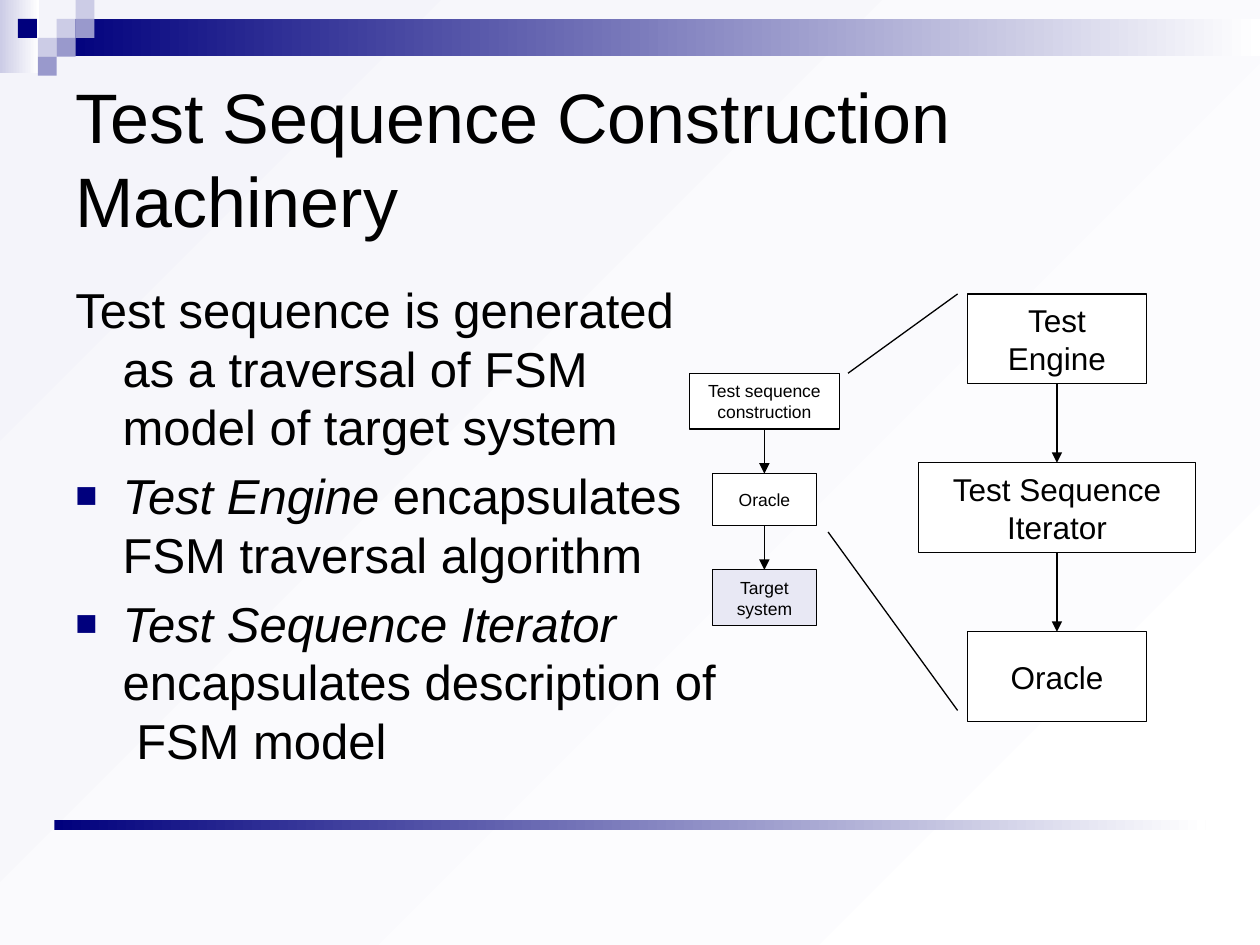
from dataclasses import dataclass
from typing import NamedTuple

from lxml import etree
from pptx import Presentation
from pptx.dml.color import RGBColor
from pptx.enum import shapes, text
from pptx.oxml import ns
from pptx.util import Pt


@dataclass(frozen=True)
class Theme:
    font: str = "Arial"
    ink: str = "000000"
    navy: str = "00007D"
    mid: str = "9999CC"
    pale: str = "CCCCE6"
    tint: str = "E8E8F4"
    mist: str = "F4F4FA"
    white: str = "FFFFFF"
    title: float = 40
    body: float = 28
    large: float = 18
    small: float = 10
    line: float = 0.75


class Area(NamedTuple):
    left: float
    top: float
    width: float
    height: float


class Tile(NamedTuple):
    col: float
    row: int
    color: str


class Node(NamedTuple):
    label: str
    area: Area
    size: float
    fill: str


class Item(NamedTuple):
    lead: str
    rest: str


class Ray(NamedTuple):
    x1: float
    y1: float
    x2: float
    y2: float


T = Theme()
deck = Presentation()
deck.slide_width, deck.slide_height = Pt(720), Pt(540)
slide = deck.slides.add_slide(deck.slide_layouts[6])


def rgb(code: str) -> RGBColor:
    return RGBColor.from_string(code)


def sub(parent, tag: str, **attrs: str):
    return etree.SubElement(parent, ns.qn(tag), attrs)


def blend(fill, start: str, angle: float = 0) -> None:
    """Fade from a colour to white."""
    fill.gradient()
    fill.gradient_angle = angle
    for stop, code in zip(fill.gradient_stops, (start, T.white)):
        stop.color.rgb = rgb(code)


def style(run, size: float, slant: bool = False) -> None:
    run.font.name, run.font.size = T.font, Pt(size)
    run.font.color.rgb = rgb(T.ink)
    run.font.italic = slant


def block(area: Area):
    box = slide.shapes.add_shape(shapes.MSO_SHAPE.RECTANGLE, *map(Pt, area))
    box.shadow.inherit = False
    box.line.fill.background()
    return box


def draw_bar(area: Area, color: str) -> None:
    blend(block(area).fill, color)


def draw_tile(tile: Tile) -> None:
    box = block(Area(tile.col * UNIT, tile.row * UNIT, UNIT, UNIT))
    box.fill.solid()
    box.fill.fore_color.rgb = rgb(tile.color)


def add_text(area: Area, anchor):
    frame = slide.shapes.add_textbox(*map(Pt, area)).text_frame
    frame.word_wrap = True
    frame.vertical_anchor = anchor
    return frame


def draw_item(para, item: Item) -> None:
    """Hanging paragraph; a lead phrase brings a bullet and italics."""
    para.space_before = Pt(0.2 * T.body)
    props = para._p.get_or_add_pPr()
    props.set("marL", str(Pt(27)))
    props.set("indent", str(-Pt(27)))
    if item.lead:
        sub(sub(props, "a:buClr"), "a:srgbClr", val=T.navy)
        sub(props, "a:buSzPct", val="75000")
        sub(props, "a:buFont", typeface=T.font)
        sub(props, "a:buChar", char="■")
    for part in filter(None, item):
        run = para.add_run()
        run.text = part
        style(run, T.body, part == item.lead)


def draw_node(node: Node):
    box = block(node.area)
    box.fill.solid()
    box.fill.fore_color.rgb = rgb(node.fill)
    box.line.color.rgb, box.line.width = rgb(T.ink), Pt(T.line)
    frame = box.text_frame
    frame.text = node.label
    frame.word_wrap = True
    frame.vertical_anchor = text.MSO_ANCHOR.MIDDLE
    para = frame.paragraphs[0]
    para.alignment = text.PP_ALIGN.CENTER
    style(para.runs[0], node.size)
    return box


def draw_line(ray: Ray):
    link = slide.shapes.add_connector(
        shapes.MSO_CONNECTOR.STRAIGHT, *map(Pt, ray))
    link.line.color.rgb, link.line.width = rgb(T.ink), Pt(T.line)
    sub(link._element.spPr, "a:effectLst")
    return link


def draw_chain(nodes: list[Node]) -> None:
    boxes = [draw_node(node) for node in nodes]
    for upper, lower in zip(boxes, boxes[1:]):
        link = draw_line(Ray(0, 0, 0, 0))
        link.begin_connect(upper, 2)
        link.end_connect(lower, 0)
        sub(link.line._get_or_add_ln(), "a:tailEnd", type="triangle")


# Background and corner ornament
UNIT = 10.8
blend(slide.background.fill, T.mist, 315)
draw_bar(Area(0, 0, 22.3, 41.8), T.pale)
draw_bar(Area(32.4, 10.8, 687.6, 21.4), T.navy)
for tile in (Tile(3, 1, T.pale), Tile(4, 0, T.pale), Tile(4, 1, T.mid),
             Tile(2, 2, T.pale), Tile(0.95, 1, T.navy), Tile(3, 2, T.mid),
             Tile(2, 3, T.mid)):
    draw_tile(tile)
draw_bar(Area(31, 468.7, 658, 5.4), T.navy)

# Title
head = add_text(Area(36, 36, 648, 108), text.MSO_ANCHOR.MIDDLE)
head.text = "Test Sequence Construction Machinery"
style(head.paragraphs[0].runs[0], T.title)

# Body
items = [
    Item("", "Test sequence is generated as a traversal of FSM model of target system"),
    Item("Test Engine", " encapsulates FSM traversal algorithm"),
    Item("Test Sequence Iterator", " encapsulates description of  FSM model"),
]
body = add_text(Area(36, 156, 381, 306), text.MSO_ANCHOR.TOP)
for i, item in enumerate(items):
    draw_item(body.add_paragraph() if i else body.paragraphs[0], item)

# Detailed chain, evenly stepped
STEP = 96.5
draw_chain([
    Node(label, Area(604 - wide / 2, 168 + i * STEP, wide, 51.2), T.large, T.white)
    for i, (label, wide) in enumerate(
        [("Test Engine", 102), ("Test Sequence Iterator", 158.6), ("Oracle", 102)])
])

# Overview chain
draw_chain([
    Node("Test sequence construction", Area(394, 213.4, 85.6, 31.8), T.small, T.white),
    Node("Oracle", Area(407, 270.6, 59.6, 29.6), T.small, T.white),
    Node("Target system", Area(407, 325.6, 59.6, 31.8), T.small, T.tint),
])

# Zoom lines from overview to detail
for ray in (Ray(484.6, 213.3, 547.2, 168), Ray(473.2, 304, 547.2, 406)):
    draw_line(ray)

deck.save("out.pptx")
